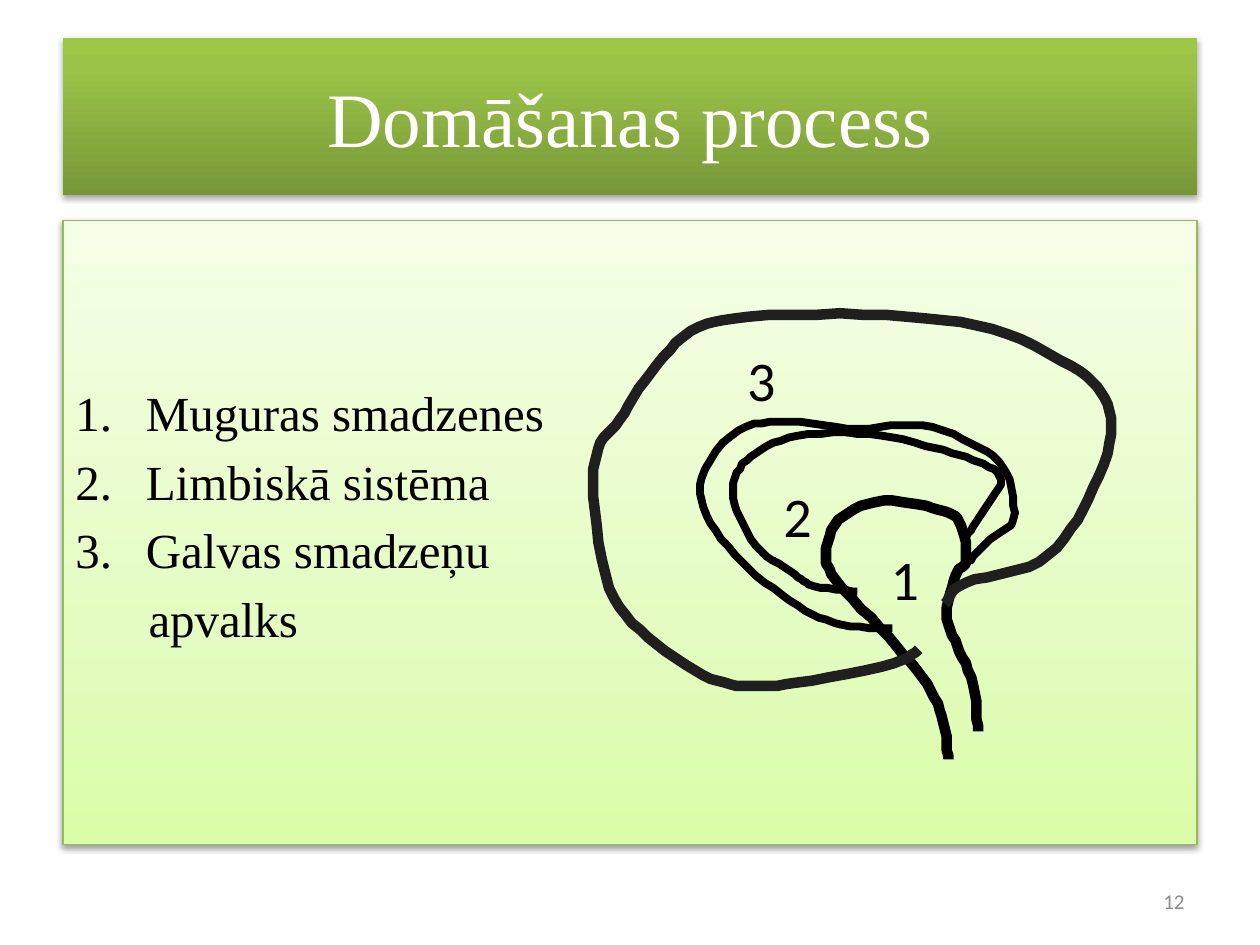
from pptx import Presentation
from pptx.dml.color import RGBColor
from pptx.enum.shapes import MSO_SHAPE as Shape
from pptx.enum.text import MSO_ANCHOR as Anchor, PP_ALIGN as Align
from pptx.oxml import parse_xml
from pptx.oxml.ns import nsdecls
from pptx.util import Pt

COLORS = {
    "white": "FFFFFF", "black": "000000", "cortex": "1F1F1F",
    "border": "98B955", "page": "8C8C8C",
    "title dark": "779737", "title middle": "9BC348", "title light": "9DC746",
    "panel dark": "DAFDA7", "panel middle": "E4FCC2", "panel light": "F5FFE7",
}
TITLE_STOPS = {0: "title dark", 80: "title middle", 100: "title light"}
PANEL_STOPS = {0: "panel dark", 35: "panel middle", 100: "panel light"}
SERIF, SANS = "Times New Roman", "Calibri"

# Page grid: title and panel share the same margin and width
MARGIN, CONTENT_WIDTH = 36, 648
LIST_INDENT = 40.3
STEPS_PER_SPAN = 6

# Each brain part: line width, colour, and the few points its curve passes through
BRAIN_PARTS = {
    "stem": (6, "black", [
        (559, 418), (556, 391), (547, 369), (541, 351), (546, 329), (552, 320),
        (549, 300), (539, 292), (505, 286), (482, 295), (472, 313), (478, 332),
        (508, 364), (530, 391), (539, 413), (542, 434)]),
    "inner limbic loop": (4.5, "black", [
        (552, 307), (562, 292), (572, 274), (559, 264), (534, 256), (497, 248),
        (456, 249), (432, 259), (420, 273), (421, 292), (435, 315), (454, 328),
        (465, 335), (490, 338)]),
    "outer limbic loop": (4.5, "black", [
        (554, 321), (564, 310), (579, 297), (575, 270), (560, 256), (527, 243),
        (491, 245), (451, 241), (422, 246), (401, 273), (406, 299), (428, 325),
        (456, 346), (481, 357), (510, 359)]),
    "cortex": (6, "cortex", [
        (540, 345), (552, 333), (594, 321), (619, 291), (634, 253), (631, 227),
        (612, 209), (567, 188), (507, 180), (428, 181), (395, 189), (372, 213),
        (354, 240), (342, 256), (339, 284), (348, 336), (370, 364), (402, 386),
        (425, 392), (456, 390), (511, 379), (525, 371)]),
}
PART_LABELS = {"1": (501.8, 307.4), "2": (440.6, 271.4), "3": (419.8, 193.7)}


def write_text(paragraph, text, size=28, font=SERIF, color="black", align=Align.LEFT):
    paragraph.alignment = align
    run = paragraph.add_run()
    run.text = text
    run.font.size = Pt(size)
    run.font.name = font
    run.font.color.rgb = RGBColor.from_string(COLORS[color])


def set_line(shape, color, width):
    shape.line.color.rgb = RGBColor.from_string(COLORS[color])
    shape.line.width = Pt(width)


def style_panel(shape, stops, shadow_percent):
    """Fill a panel with a vertical gradient and put a soft shadow below it."""
    stop_xml = "".join(
        f'<a:gs pos="{position * 1000}"><a:srgbClr val="{COLORS[color]}"/></a:gs>'
        for position, color in stops.items())
    properties = shape._element.spPr
    properties.append(parse_xml(
        f'<a:gradFill {nsdecls("a")} rotWithShape="1"><a:gsLst>{stop_xml}</a:gsLst>'
        '<a:lin ang="16200000" scaled="0"/></a:gradFill>'))
    shape.line.fill.background()
    properties.append(parse_xml(
        f'<a:effectLst {nsdecls("a")}><a:outerShdw blurRad="{Pt(3.1)}" '
        f'dist="{Pt(1.7)}" dir="5400000" rotWithShape="0">'
        f'<a:srgbClr val="000000"><a:alpha val="{shadow_percent * 1000}"/>'
        '</a:srgbClr></a:outerShdw></a:effectLst>'))


def add_title(slide, text):
    title = slide.shapes.title
    title.left, title.top = Pt(MARGIN), Pt(21.6)
    title.width, title.height = Pt(CONTENT_WIDTH), Pt(90)
    style_panel(title, TITLE_STOPS, shadow_percent=35)
    title.text_frame.vertical_anchor = Anchor.MIDDLE
    write_text(title.text_frame.paragraphs[0], text, size=44, color="white",
               align=Align.CENTER)


def indent_paragraph(paragraph, left, numbered):
    """Indent a paragraph; a numbered one hangs its number in the indent."""
    settings = paragraph._p.get_or_add_pPr()
    settings.set("marL", str(Pt(left)))
    if numbered:
        settings.set("indent", str(-Pt(left)))
        settings.append(parse_xml(
            f'<a:buAutoNum {nsdecls("a")} type="arabicPeriod"/>'))


def add_list_panel(slide, items, continuation):
    panel = slide.shapes.add_shape(
        Shape.RECTANGLE, Pt(MARGIN), Pt(126), Pt(CONTENT_WIDTH), Pt(356.4))
    style_panel(panel, PANEL_STOPS, shadow_percent=38)
    set_line(panel, "border", 0.75)
    frame = panel.text_frame
    frame.word_wrap = True
    frame.vertical_anchor = Anchor.TOP
    frame.margin_top = Pt(92.5)
    for index, text in enumerate([*items, continuation]):
        paragraph = frame.add_paragraph() if index else frame.paragraphs[0]
        paragraph.space_before = Pt(5.6 if index else 0)
        write_text(paragraph, text)
        numbered = index < len(items)
        indent_paragraph(paragraph, LIST_INDENT if numbered else LIST_INDENT + 1.5,
                         numbered)


def smooth_curve(points):
    """Return closely spaced points on a Catmull-Rom spline through the given ones."""
    padded = [points[0], *points, points[-1]]
    curve = [points[0]]
    for before, start, end, after in zip(padded, padded[1:], padded[2:], padded[3:]):
        for step in range(1, STEPS_PER_SPAN + 1):
            t = step / STEPS_PER_SPAN
            curve.append(tuple(
                (2 * b + (c - a) * t + (2 * a - 5 * b + 4 * c - d) * t ** 2
                 + (3 * b - a - 3 * c + d) * t ** 3) / 2
                for a, b, c, d in zip(before, start, end, after)))
    return curve


def add_curve(slide, points, width, color):
    start, *rest = smooth_curve(points)
    builder = slide.shapes.build_freeform(*start, scale=Pt(1))
    builder.add_line_segments(rest, close=False)
    shape = builder.convert_to_shape()
    shape.shadow.inherit = False
    shape.fill.background()
    set_line(shape, color, width)


def add_label(slide, text, left, top, width, height, anchor=Anchor.TOP, **text_format):
    box = slide.shapes.add_textbox(Pt(left), Pt(top), Pt(width), Pt(height))
    box.text_frame.word_wrap = True
    box.text_frame.vertical_anchor = anchor
    write_text(box.text_frame.paragraphs[0], text, font=SANS, **text_format)


def main():
    presentation = Presentation()
    presentation.slide_width, presentation.slide_height = Pt(720), Pt(540)
    slide = presentation.slides.add_slide(presentation.slide_layouts[5])

    # Title and numbered list
    add_title(slide, "Domāšanas process")
    add_list_panel(slide, ["Muguras smadzenes", "Limbiskā sistēma", "Galvas smadzeņu"],
                   continuation="apvalks")

    # Brain drawing, from the stem outwards, with the list numbers on its parts
    for width, color, points in BRAIN_PARTS.values():
        add_curve(slide, points, width, color)
    for number, (left, top) in PART_LABELS.items():
        add_label(slide, number, left, top, 32, 46, size=32)

    # Page number
    add_label(slide, "12", 516.2, 500.4, 167.8, 28.8, anchor=Anchor.MIDDLE,
              size=12, color="page", align=Align.RIGHT)

    presentation.save("out.pptx")


if __name__ == "__main__":
    main()
